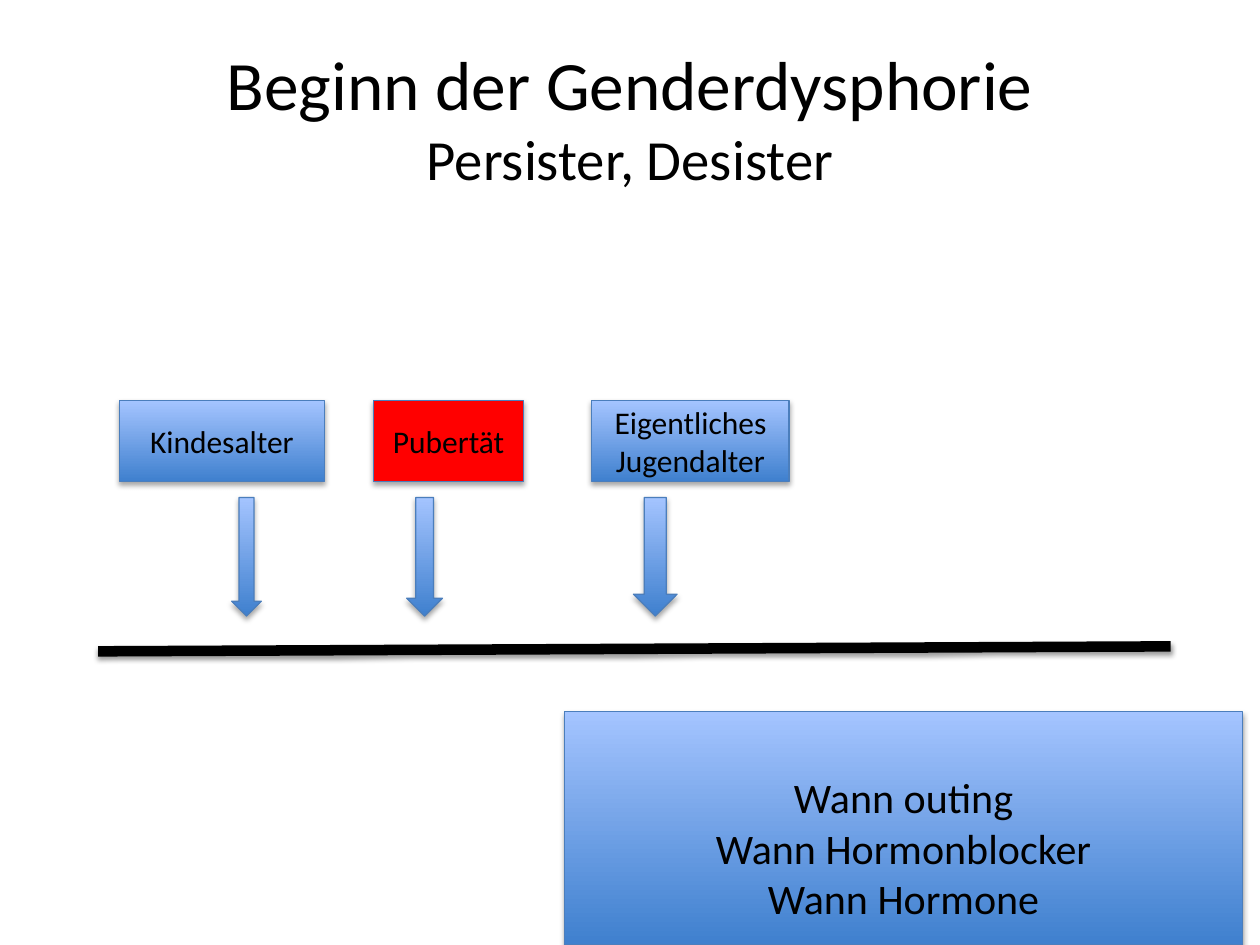
"""Build the slide on the onset of gender dysphoria with its age timeline."""
import pptx
import pptx.dml.color
import pptx.enum.shapes
import pptx.enum.text
import pptx.oxml
import pptx.oxml.ns
import pptx.util
from pptx.util import Cm, Pt

COLORS = {
    "black": "000000",
    "red": "FF0000",
    "deep blue": "3F80CE",
    "light blue": "A4C4FF",
    "outline": "4B7EBC",
}
RGB = {name: pptx.dml.color.RGBColor.from_string(value) for name, value in COLORS.items()}
SHAPES = pptx.enum.shapes.MSO_SHAPE


def finish(shape, line_color, line_width, distance, opacity):
    shape.line.color.rgb = RGB[line_color]
    shape.line.width = Pt(line_width)
    shape._element.spPr.append(pptx.oxml.parse_xml(
        f'<a:effectLst {pptx.oxml.ns.nsdecls("a")}>'
        f'<a:outerShdw blurRad="{Pt(3.1)}" dist="{Pt(distance)}" dir="5400000" rotWithShape="0">'
        f'<a:srgbClr val="{COLORS["black"]}"><a:alpha val="{opacity * 1000}"/></a:srgbClr>'
        '</a:outerShdw></a:effectLst>'))


def write(shape, text, sizes):
    frame = shape.text_frame
    frame.word_wrap = True
    frame.vertical_anchor = pptx.enum.text.MSO_ANCHOR.MIDDLE
    frame.text = text
    for para in frame.paragraphs:
        para.alignment = pptx.enum.text.PP_ALIGN.CENTER
        for span, size in zip(para.runs, sizes):
            span.font.name = "Calibri"
            span.font.size = Pt(size)
            span.font.color.rgb = RGB["black"]


deck = pptx.Presentation()
deck.slide_width, deck.slide_height = Cm(25.4), Cm(19.05)
page = deck.slides.add_slide(deck.slide_layouts[6])

title = page.shapes.add_textbox(Cm(1.27), Cm(0.76), Cm(22.86), Cm(3.18))
write(title, "Beginn der Genderdysphorie\vPersister, Desister", [39.6, 32.4])

timeline = page.shapes.add_connector(
    pptx.enum.shapes.MSO_CONNECTOR.STRAIGHT, Cm(1.98), Cm(13.13), Cm(23.6), Cm(13.03))
finish(timeline, "black", 6, 1.6, 38)

arrows = [(4.67, 0.6), (8.2, 0.72), (12.77, 0.88)]
stages = [
    ("Kindesalter", 2.41, 4.13),
    ("Pubertät", 7.53, 3.03),
    ("Eigentliches Jugendalter", 11.93, 3.98),
]
questions = "Wann outing\nWann Hormonblocker\nWann Hormone"

blocks = [(SHAPES.DOWN_ARROW, left, 10.03, width, 2.39, "", 18) for left, width in arrows]
blocks += [(SHAPES.RECTANGLE, left, 8.08, width, 1.63, text, 18) for text, left, width in stages]
blocks.append((SHAPES.RECTANGLE, 11.38, 14.35, 13.67, 4.7, questions, 24))

for kind, left, top, width, height, text, size in blocks:
    block = page.shapes.add_shape(kind, Cm(left), Cm(top), Cm(width), Cm(height))
    if text == "Pubertät":
        block.fill.solid()
        block.fill.fore_color.rgb = RGB["red"]
    else:
        block.fill.gradient()
        block.fill.gradient_angle = 90
        for stop, color in zip(block.fill.gradient_stops, ("deep blue", "light blue")):
            stop.color.rgb = RGB[color]
    finish(block, "outline", 0.75, 1.8, 35)
    if text:
        write(block, text, [size])
    if text == questions:
        block.text_frame.margin_top = Cm(0.89)

deck.save("out.pptx")
